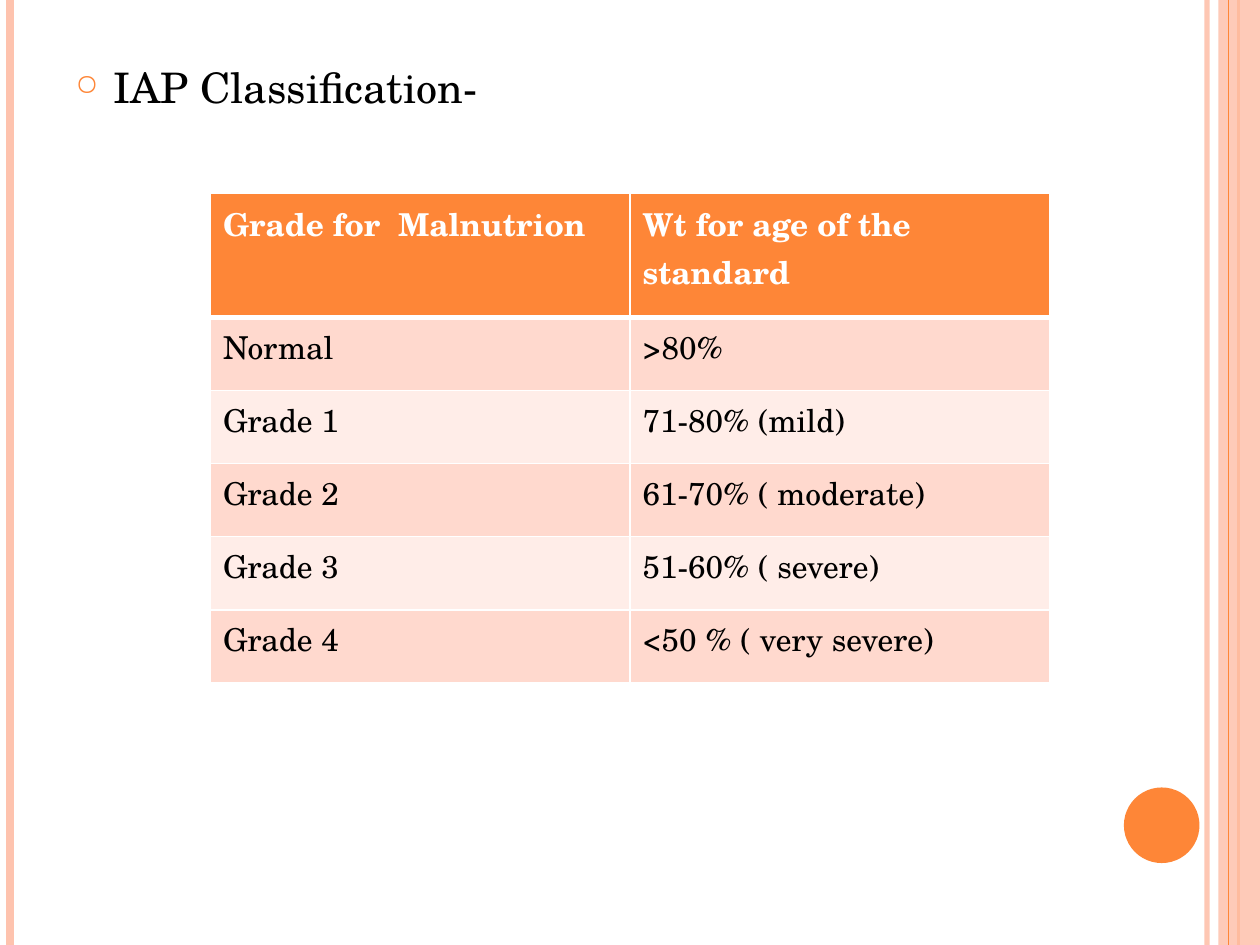
from dataclasses import dataclass

from lxml import etree
from pptx import Presentation
from pptx.dml.color import RGBColor
from pptx.enum import shapes, text
from pptx.oxml import ns
from pptx.util import Inches, Pt


@dataclass(frozen=True)
class Theme:
    font: str = "TeX Gyre Schola"
    orange: str = "FE8637"
    peach: str = "FEC3AE"
    dark_band: str = "FFD9CE"
    light_band: str = "FFEDE8"
    ink: str = "000000"
    white: str = "FFFFFF"
    heading_size: int = 24
    table_size: int = 18


THEME = Theme()
SLIDE_WIDTH, SLIDE_HEIGHT = 10, 7.5

GRADES = [
    ("Grade for  Malnutrion", "Wt for age of the standard"),
    ("Normal", ">80%"),
    ("Grade 1", "71-80% (mild)"),
    ("Grade 2", "61-70% ( moderate)"),
    ("Grade 3", "51-60% ( severe)"),
    ("Grade 4", "<50 % ( very severe)"),
]


def sub(parent, tag, **attributes):
    return etree.SubElement(parent, ns.qn(tag), attributes)


def set_alpha(holder, percent):
    for color in holder.iter(ns.qn("a:srgbClr")):
        sub(color, "a:alpha", val=str(percent * 1000))


def write(frame, words, size, color=THEME.ink, bold=False, space_before=0):
    frame.word_wrap = True
    paragraph = frame.paragraphs[0]
    paragraph.space_before = Pt(space_before)
    run = paragraph.add_run()
    run.text = words
    run.font.name = THEME.font
    run.font.size = Pt(size)
    run.font.bold = bold
    run.font.color.rgb = RGBColor.from_string(color)
    return paragraph


def add_stripe(slide, x, color, width, opacity=100):
    stripe = slide.shapes.add_connector(
        shapes.MSO_CONNECTOR.STRAIGHT, Inches(x), 0, Inches(x), Inches(SLIDE_HEIGHT))
    stripe.line.color.rgb = RGBColor.from_string(color)
    stripe.line.width = Pt(width)
    properties = stripe._element.spPr
    if opacity < 100:
        set_alpha(properties, opacity)
    sub(properties, "a:effectLst")


def add_block(slide, kind, box, color, opacity=100):
    block = slide.shapes.add_shape(kind, *map(Inches, box))
    block.shadow.inherit = False
    block.fill.solid()
    block.fill.fore_color.rgb = RGBColor.from_string(color)
    block.line.fill.background()
    if opacity < 100:
        set_alpha(block._element.spPr, opacity)


def add_heading(slide, words):
    heading = slide.shapes.add_textbox(
        Inches(0.5), Inches(0.44), Inches(8.17), Inches(6.64))
    heading.text_frame.vertical_anchor = text.MSO_ANCHOR.TOP
    paragraph = write(heading.text_frame, words, THEME.heading_size, space_before=6)
    # Hanging ring bullet
    properties = paragraph._p.get_or_add_pPr()
    properties.set("marL", str(Inches(0.3)))
    properties.set("indent", str(-Inches(0.3)))
    sub(sub(properties, "a:buClr"), "a:srgbClr", val=THEME.orange)
    sub(properties, "a:buSzPct", val="70000")
    sub(properties, "a:buChar", char="○")


def style_cell(cell, fill, edges):
    properties = cell._tc.get_or_add_tcPr()
    for side, width in edges.items():
        border = sub(properties, f"a:ln{side}", w=str(Pt(width)))
        sub(sub(border, "a:solidFill"), "a:srgbClr", val=THEME.white)
    cell.fill.solid()
    cell.fill.fore_color.rgb = RGBColor.from_string(fill)


def add_grades(slide):
    header_height, row_height = 0.99, 0.58
    height = header_height + row_height * (len(GRADES) - 1)
    table = slide.shapes.add_table(
        len(GRADES), 2, Inches(1.67), Inches(1.53), Inches(6.66), Inches(height)).table
    for index, grade in enumerate(GRADES):
        header = index == 0
        table.rows[index].height = Inches(header_height if header else row_height)
        band = THEME.dark_band if index % 2 else THEME.light_band
        # The rule under the header is the heavy one
        edges = {"L": 1, "R": 1, "T": 3 if index == 1 else 1, "B": 3 if header else 1}
        for column, words in enumerate(grade):
            cell = table.cell(index, column)
            style_cell(cell, THEME.orange if header else band, edges)
            write(cell.text_frame, words, THEME.table_size, bold=header,
                  color=THEME.white if header else THEME.ink)


def main():
    deck = Presentation()
    deck.slide_width, deck.slide_height = Inches(SLIDE_WIDTH), Inches(SLIDE_HEIGHT)
    slide = deck.slides.add_slide(deck.slide_layouts[6])

    # Side decoration
    add_stripe(slide, 9.58, THEME.peach, 3, opacity=93)
    add_stripe(slide, 0.08, THEME.peach, 4.5)
    add_stripe(slide, 9.83, THEME.orange, 1.5)
    add_block(slide, shapes.MSO_SHAPE.RECTANGLE, (9.67, 0, 0.33, SLIDE_HEIGHT),
              THEME.peach, opacity=87)
    add_stripe(slide, 9.75, THEME.orange, 0.75)
    add_block(slide, shapes.MSO_SHAPE.OVAL, (8.92, 6.25, 0.6, 0.6), THEME.orange)

    # Content
    add_heading(slide, "IAP Classification-")
    add_grades(slide)

    deck.save("out.pptx")


if __name__ == "__main__":
    main()
